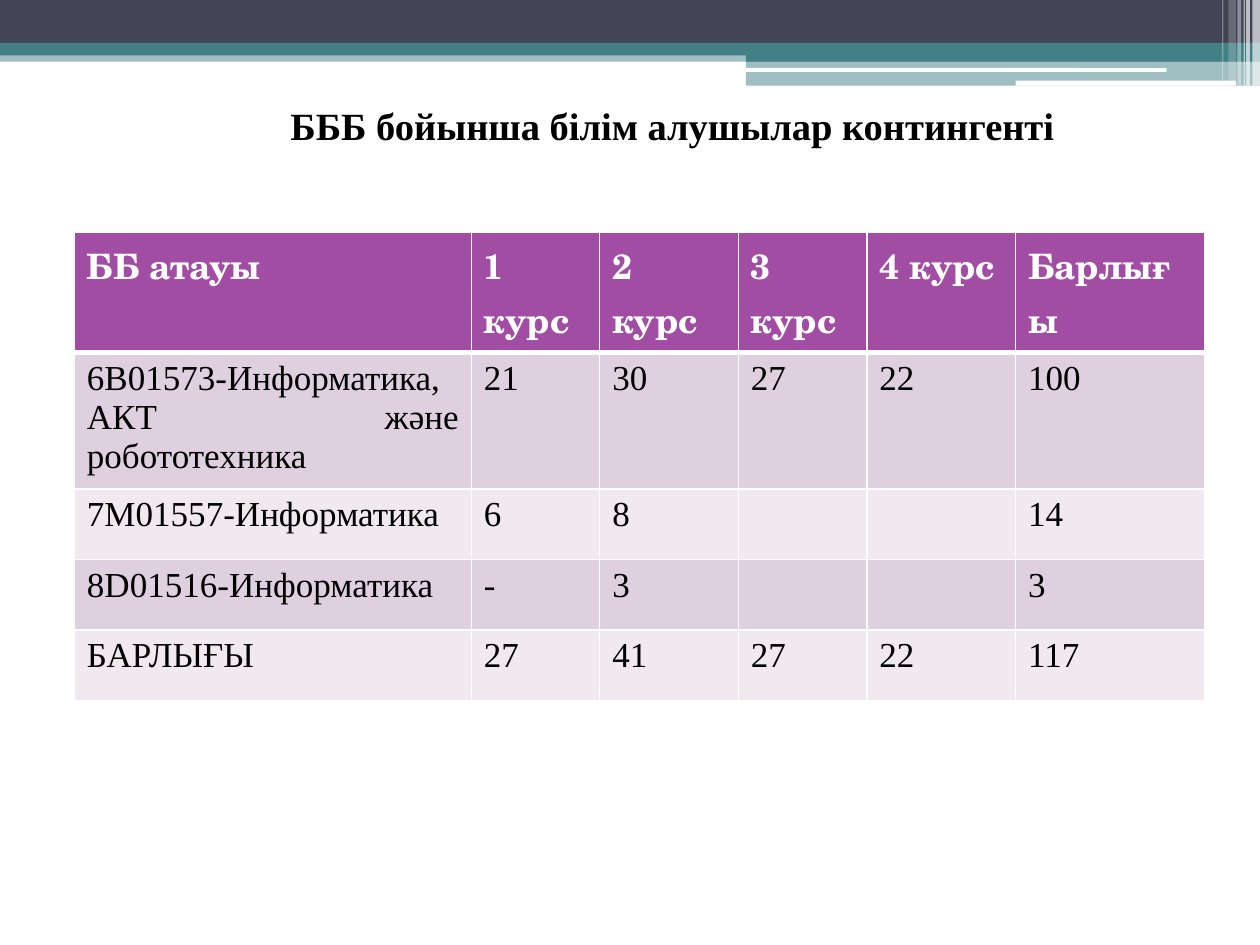
from lxml import etree
from pptx import Presentation
from pptx.dml.color import RGBColor
from pptx.enum.shapes import MSO_SHAPE
from pptx.enum.text import MSO_ANCHOR, PP_ALIGN
from pptx.oxml.ns import qn
from pptx.util import Inches, Pt

RECTANGLE, ROUNDED = MSO_SHAPE.RECTANGLE, MSO_SHAPE.ROUNDED_RECTANGLE
LEFT, CENTER, JUSTIFY = PP_ALIGN.LEFT, PP_ALIGN.CENTER, PP_ALIGN.JUSTIFY
TOP = MSO_ANCHOR.TOP

WHITE = RGBColor(0xFF, 0xFF, 0xFF)
BLACK = RGBColor(0x00, 0x00, 0x00)
NAVY = RGBColor(0x42, 0x44, 0x56)
TEAL = RGBColor(0x43, 0x80, 0x86)
PURPLE = RGBColor(0xA0, 0x4D, 0xA3)
LILAC = RGBColor(0xDF, 0xD0, 0xE0)
PALE_LILAC = RGBColor(0xF0, 0xE9, 0xF0)

BODY_FONT = "Times New Roman"
HEADER_FONT = "TeX Gyre Schola"

# Left, top, width, height, colour, opacity in percent
BANDS = [
    (0, 0.4, 10, 0.09, TEAL, 50),
    (0, 0, 10, 0.34, NAVY, 100),
    (0, 0.34, 10, 0.1, TEAL, 100),
    (5.92, 0.39, 4.08, 0.1, TEAL, 100),
    (5.92, 0.48, 4.08, 0.2, TEAL, 50),
]
WHITE_BARS = [(5.91, 0.54, 3.35, 0.03), (8.06, 0.64, 1.75, 0.04)]
# Left, width, height, opacity in percent
STRIPES = [
    (9.94, 0.06, 0.68, 65),
    (9.89, 0.03, 0.68, 65),
    (9.87, 0.01, 0.68, 60),
    (9.82, 0.03, 0.68, 40),
    (9.75, 0.06, 0.64, 20),
    (9.7, 0.01, 0.64, 30),
]

TABLE_ROWS = [
    ("ББ атауы", "1 курс", "2 курс", "3 курс", "4 курс", "Барлығы"),
    ("6В01573-Информатика, АКТ және робототехника", "21", "30", "27", "22", "100"),
    ("7М01557-Информатика", "6", "8", "", "", "14"),
    ("8D01516-Информатика", "-", "3", "", "", "3"),
    ("БАРЛЫҒЫ", "27", "41", "27", "22", "117"),
]
COLUMN_WIDTHS = [3.15, 1.02, 1.1, 1.02, 1.18, 1.5]
ROW_HEIGHTS = [0.96, 1.08, 0.56, 0.56, 0.56]


def add_bar(slide, kind, left, top, width, height, color, opacity=100):
    shape = slide.shapes.add_shape(
        kind, Inches(left), Inches(top), Inches(width), Inches(height))
    shape.shadow.inherit = False
    shape.line.fill.background()
    shape.fill.solid()
    shape.fill.fore_color.rgb = color
    if opacity < 100:
        color_element = shape.fill._xPr.find(".//" + qn("a:srgbClr"))
        etree.SubElement(color_element, qn("a:alpha"), val=str(opacity * 1000))


def add_run(paragraph, text, size, font, color, bold):
    run = paragraph.add_run()
    run.text = text
    run.font.size = Pt(size)
    run.font.name = font
    run.font.color.rgb = color
    run.font.bold = bold


def add_title(slide, text):
    title = slide.shapes.title
    title.left, title.top = Inches(2.17), Inches(0.76)
    title.width, title.height = Inches(6.33), Inches(0.47)
    frame = title.text_frame
    frame.word_wrap = False
    frame.vertical_anchor = TOP
    paragraph = frame.paragraphs[0]
    paragraph.alignment = CENTER
    add_run(paragraph, text, 22, BODY_FONT, BLACK, True)


def set_borders(cell, widths):
    """Put white borders before the fill, as the cell schema requires."""
    properties = cell._tc.get_or_add_tcPr()
    for index, (side, width) in enumerate(widths.items()):
        line = etree.Element(qn("a:" + side), w=str(Pt(width)))
        fill = etree.SubElement(line, qn("a:solidFill"))
        etree.SubElement(fill, qn("a:srgbClr"), val=str(WHITE))
        properties.insert(index, line)


def format_cell(cell, text, row, column):
    is_header = row == 0
    cell.margin_bottom = 0
    cell.fill.solid()
    cell.fill.fore_color.rgb = (
        PURPLE if is_header else LILAC if row % 2 else PALE_LILAC)
    set_borders(cell, {"lnL": 1, "lnR": 1, "lnT": 3 if row == 1 else 1,
                       "lnB": 3 if is_header else 1})
    paragraph = cell.text_frame.paragraphs[0]
    paragraph.alignment = JUSTIFY if column == 0 and not is_header else LEFT
    if not text:
        paragraph.font.size = Pt(20)
    elif is_header:
        add_run(paragraph, text, 20, HEADER_FONT, WHITE, True)
    else:
        add_run(paragraph, text, 20, BODY_FONT, BLACK, False)


def add_student_table(slide):
    table = slide.shapes.add_table(
        len(TABLE_ROWS), len(COLUMN_WIDTHS), Inches(0.59), Inches(1.84),
        Inches(sum(COLUMN_WIDTHS)), Inches(sum(ROW_HEIGHTS))).table
    for column, width in zip(table.columns, COLUMN_WIDTHS):
        column.width = Inches(width)
    for row, height in zip(table.rows, ROW_HEIGHTS):
        row.height = Inches(height)
    for row, texts in enumerate(TABLE_ROWS):
        for column, text in enumerate(texts):
            format_cell(table.cell(row, column), text, row, column)


def main():
    presentation = Presentation()
    presentation.slide_width = Inches(10)
    presentation.slide_height = Inches(7.5)
    slide = presentation.slides.add_slide(presentation.slide_layouts[5])

    # Decorative header
    for band in BANDS:
        add_bar(slide, RECTANGLE, *band)
    for bar in WHITE_BARS:
        add_bar(slide, ROUNDED, *bar, WHITE)
    for left, width, height, opacity in STRIPES:
        add_bar(slide, RECTANGLE, left, 0, width, height, WHITE, opacity)

    # Content
    add_title(slide, "БББ бойынша білім алушылар контингенті")
    add_student_table(slide)
    presentation.save("out.pptx")


if __name__ == "__main__":
    main()
